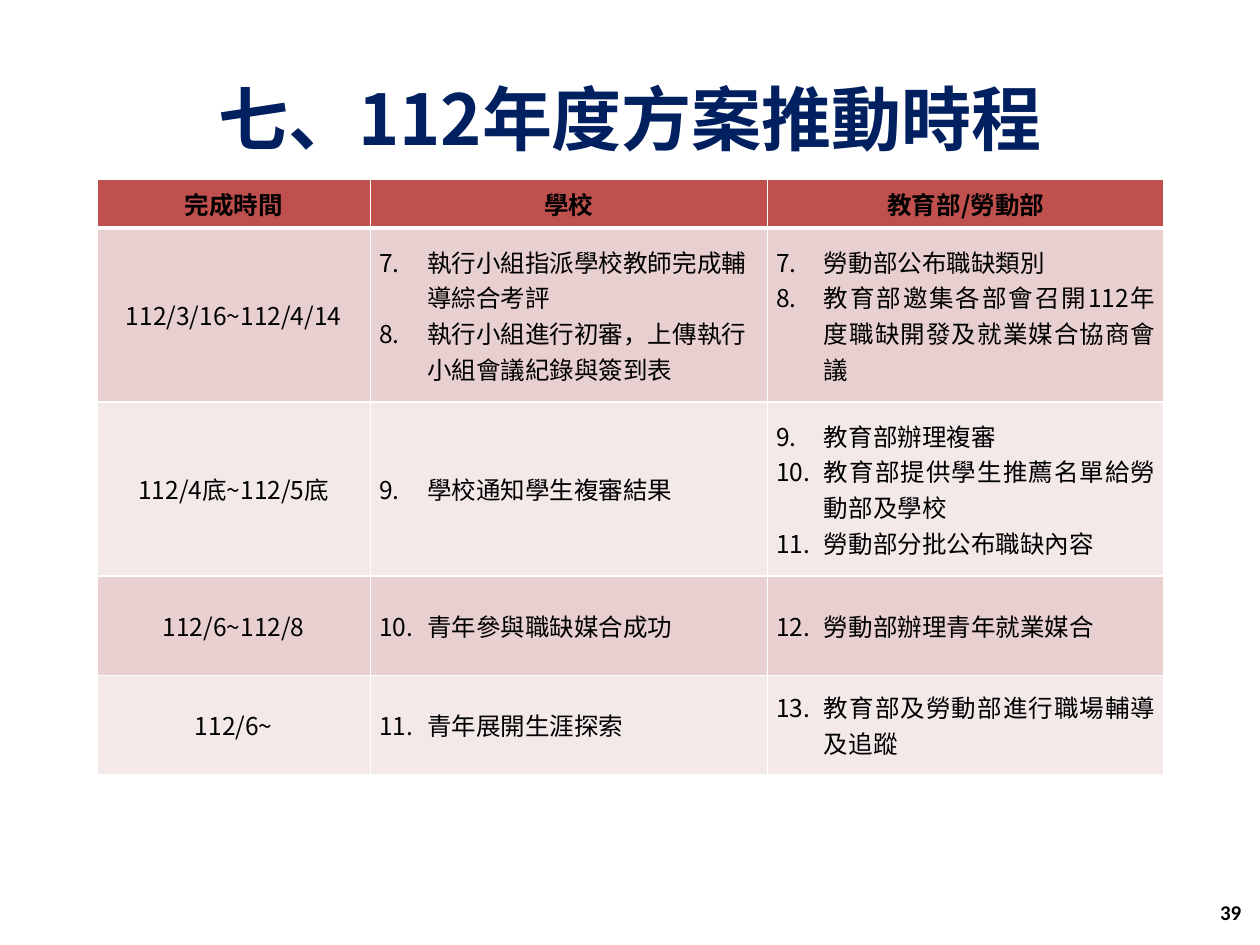
from lxml.etree import SubElement
from pptx import Presentation
from pptx.dml.color import RGBColor
from pptx.enum.text import MSO_ANCHOR, PP_ALIGN
from pptx.oxml.ns import qn
from pptx.util import Inches, Pt

NAVY = RGBColor(0x00, 0x20, 0x60)
BLACK = RGBColor(0x00, 0x00, 0x00)
RED = RGBColor(0xC0, 0x50, 0x4D)
ROSE = RGBColor(0xE8, 0xD0, 0xD0)
PALE_ROSE = RGBColor(0xF4, 0xE9, 0xE9)
WHITE = RGBColor(0xFF, 0xFF, 0xFF)
CJK_FONT = "Noto Sans CJK SC"


def write_text(frame, lines, size=14, font=CJK_FONT, color=BLACK, bold=False,
               align=PP_ALIGN.CENTER, start=None):
    for index, line in enumerate(lines):
        paragraph = frame.add_paragraph() if index else frame.paragraphs[0]
        paragraph.alignment = align
        if start:
            properties = paragraph._p.get_or_add_pPr()
            properties.set("marL", str(Inches(0.38)))
            properties.set("indent", str(Inches(-0.38)))
            SubElement(properties, qn("a:buAutoNum"), type="arabicPeriod", startAt=str(start))
        run = paragraph.add_run()
        run.text = line
        run.font.size = Pt(size)
        run.font.bold = bold
        run.font.color.rgb = color
        run.font.name = font
        SubElement(run._r.get_or_add_rPr(), qn("a:ea"), typeface=font)


def style_cell(cell, fill, bottom_width):
    cell.vertical_anchor = MSO_ANCHOR.MIDDLE
    cell.margin_left = cell.margin_right = Inches(0.07)
    cell.margin_top = cell.margin_bottom = 0
    properties = cell._tc.get_or_add_tcPr()
    for side, width in (("L", 1), ("R", 1), ("T", 1), ("B", bottom_width)):
        border = SubElement(properties, qn(f"a:ln{side}"), w=str(Pt(width)))
        border_fill = SubElement(border, qn("a:solidFill"))
        SubElement(border_fill, qn("a:srgbClr"), val=str(WHITE))
    cell.fill.solid()
    cell.fill.fore_color.rgb = fill


prs = Presentation()
prs.slide_width = Inches(10)
prs.slide_height = Inches(7.5)
slide = prs.slides.add_slide(prs.slide_layouts[6])

title = slide.shapes.add_textbox(Inches(0), Inches(0.62), Inches(10), Inches(0.63)).text_frame
title.word_wrap = True
title.vertical_anchor = MSO_ANCHOR.MIDDLE
write_text(title, ["七、112年度方案推動時程"], size=40, color=NAVY, bold=True)

headings = ["完成時間", "學校", "教育部/勞動部"]
stages = [
    ("112/3/16~112/4/14",
     (7, ["執行小組指派學校教師完成輔導綜合考評", "執行小組進行初審，上傳執行小組會議紀錄與簽到表"]),
     (7, ["勞動部公布職缺類別", "教育部邀集各部會召開112年度職缺開發及就業媒合協商會議"])),
    ("112/4底~112/5底",
     (9, ["學校通知學生複審結果"]),
     (9, ["教育部辦理複審", "教育部提供學生推薦名單給勞動部及學校", "勞動部分批公布職缺內容"])),
    ("112/6~112/8",
     (10, ["青年參與職缺媒合成功"]),
     (12, ["勞動部辦理青年就業媒合"])),
    ("112/6~",
     (11, ["青年展開生涯探索"]),
     (13, ["教育部及勞動部進行職場輔導及追蹤"])),
]

schedule = slide.shapes.add_table(
    len(stages) + 1, len(headings), Inches(0.77), Inches(1.42), Inches(8.46), Inches(4.72)).table
for column, width in zip(schedule.columns, (2.17, 3.15, 3.15)):
    column.width = Inches(width)
for row, height in zip(schedule.rows, (0.39, 1.38, 1.38, 0.79, 0.79)):
    row.height = Inches(height)

for column, heading in enumerate(headings):
    cell = schedule.cell(0, column)
    style_cell(cell, RED, 3)
    write_text(cell.text_frame, [heading], bold=True)

for row, (period, *duties) in enumerate(stages, 1):
    fill = ROSE if row % 2 else PALE_ROSE
    period_cell = schedule.cell(row, 0)
    style_cell(period_cell, fill, 1)
    write_text(period_cell.text_frame, [period])
    for column, (start, tasks) in enumerate(duties, 1):
        cell = schedule.cell(row, column)
        style_cell(cell, fill, 1)
        align = PP_ALIGN.LEFT if row == column == 1 else PP_ALIGN.JUSTIFY
        write_text(cell.text_frame, tasks, align=align, start=start)

page_number = slide.shapes.add_textbox(
    Inches(7.62), Inches(7.04), Inches(2.33), Inches(0.4)).text_frame
page_number.word_wrap = True
page_number.vertical_anchor = MSO_ANCHOR.MIDDLE
write_text(page_number, ["39"], size=12, font="Calibri", bold=True, align=PP_ALIGN.RIGHT)

prs.save("out.pptx")
